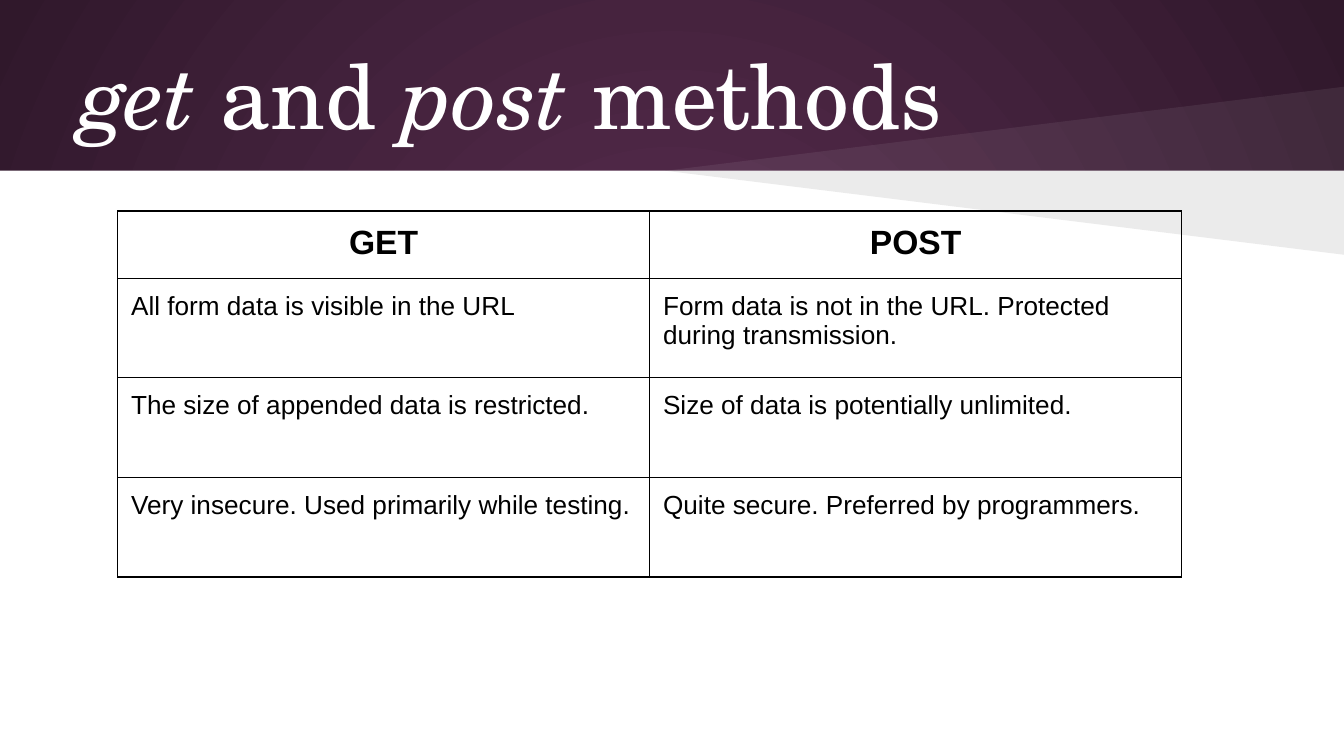
import pptx
import pptx.dml.color
import pptx.enum.shapes
import pptx.enum.text
import pptx.oxml
import pptx.oxml.ns
import pptx.util

Pt = pptx.util.Pt
NS = pptx.oxml.ns.nsdecls("a")
ROWS = [
    ("GET", "POST"),
    ("All form data is visible in the URL",
     "Form data is not in the URL. Protected during transmission."),
    ("The size of appended data is restricted.",
     "Size of data is potentially unlimited."),
    ("Very insecure. Used primarily while testing.",
     "Quite secure. Preferred by programmers."),
]
TITLE = [("get ", True), ("and ", False), ("post ", True), ("methods", False)]
INSET = dict.fromkeys(
    ("margin_left", "margin_right", "margin_top", "margin_bottom"), Pt(7.2))


def tint(text):
    """Turn a hex string into a colour."""
    return pptx.dml.color.RGBColor.from_string(text)


def style(obj, form):
    """Set each attribute in form on obj."""
    for name, value in form.items():
        setattr(obj, name, value)


def write(para, text, color, form):
    """Add one run of formatted text."""
    run = para.add_run()
    run.text = text
    style(run.font, form)
    run.font.color.rgb = tint(color)


def paint(shape, color, alpha=100):
    """Give a shape a plain fill with no line or shadow."""
    shape.shadow.inherit = False
    shape.line.fill.background()
    shape.fill.solid()
    shape.fill.fore_color.rgb = tint(color)
    if alpha < 100:
        hue = shape.element.spPr.xpath("./a:solidFill/a:srgbClr")[0]
        hue.append(pptx.oxml.parse_xml(
            f'<a:alpha {NS} val="{alpha * 1000}"/>'))


def glow(slide, inner, outer):
    """Fill the background with a round gradient."""
    fill = slide.background.fill
    fill.gradient()
    for stop, color in zip(fill.gradient_stops, (inner, outer)):
        stop.color.rgb = tint(color)
    line = slide.element.xpath("./p:cSld/p:bg//a:lin")[0]
    ring = pptx.oxml.parse_xml(
        f'<a:path {NS} path="circle"><a:fillToRect l="50000" t="50000" '
        'r="50000" b="50000"/></a:path>')
    line.getparent().replace(line, ring)


def panel(slide, left, top, width, height):
    """Draw the white body of the slide."""
    kind = pptx.enum.shapes.MSO_SHAPE.RECTANGLE
    paint(slide.shapes.add_shape(kind, left, top, width, height), "FFFFFF")


def beam(slide, left, top, width, rise):
    """Draw a light wedge above and a dark one below the panel edge."""
    right = left + width
    for sign, color, alpha in ((-1, "FFFFFF", 7), (1, "000000", 8)):
        form = slide.shapes.build_freeform(right, top)
        form.add_line_segments([(left, top), (right, top + sign * rise)])
        paint(form.convert_to_shape(), color, alpha)


def title(slide, left, top, width, height):
    """Place the slide title."""
    frame = slide.shapes.add_textbox(left, top, width, height).text_frame
    style(frame, INSET | {
        "word_wrap": True,
        "vertical_anchor": pptx.enum.text.MSO_ANCHOR.MIDDLE})
    for text, slant in TITLE:
        write(frame.paragraphs[0], text, "FFFFFF", {
            "name": "TeX Gyre Schola", "size": Pt(48), "italic": slant})


def frame_cell(cell):
    """Clear the cell fill and draw its four borders."""
    cell.fill.background()
    props = cell._tc.get_or_add_tcPr()
    for spot, side in enumerate("LRTB"):
        props.insert(spot, pptx.oxml.parse_xml(
            f'<a:ln{side} {NS} w="{Pt(0.75)}"><a:solidFill>'
            f'<a:srgbClr val="000000"/></a:solidFill></a:ln{side}>'))


def chart_rows(slide, left, top, width, head, body):
    """Place the table with a head row and equal body rows."""
    count = len(ROWS)
    high = head + body * (count - 1)
    table = slide.shapes.add_table(
        count, len(ROWS[0]), left, top, width, high).table
    style(table, {"first_row": False, "horz_banding": False})
    align = pptx.enum.text.PP_ALIGN
    for i, texts in enumerate(ROWS):
        first = i == 0
        table.rows[i].height = head if first else body
        for j, text in enumerate(texts):
            cell = table.cell(i, j)
            style(cell, INSET)
            frame_cell(cell)
            para = cell.text_frame.paragraphs[0]
            para.alignment = align.CENTER if first else align.LEFT
            write(para, text, "000000", {
                "name": "Arial", "size": Pt(18 if first else 14),
                "bold": first})


def main():
    """Build and save the slide."""
    deck = pptx.Presentation()
    style(deck, {"slide_width": Pt(720), "slide_height": Pt(405)})
    slide = deck.slides.add_slide(deck.slide_layouts[6])
    edge = Pt(91.5)
    glow(slide, "592D50", "30182B")
    panel(slide, 0, edge, deck.slide_width, deck.slide_height - edge)
    beam(slide, Pt(356.5), edge, Pt(363.5), Pt(45))
    title(slide, Pt(36), Pt(16.5), Pt(648), Pt(67.5))
    chart_rows(slide, Pt(63), Pt(113), Pt(570), Pt(34.5), Pt(53.4))
    deck.save("out.pptx")


if __name__ == "__main__":
    main()
